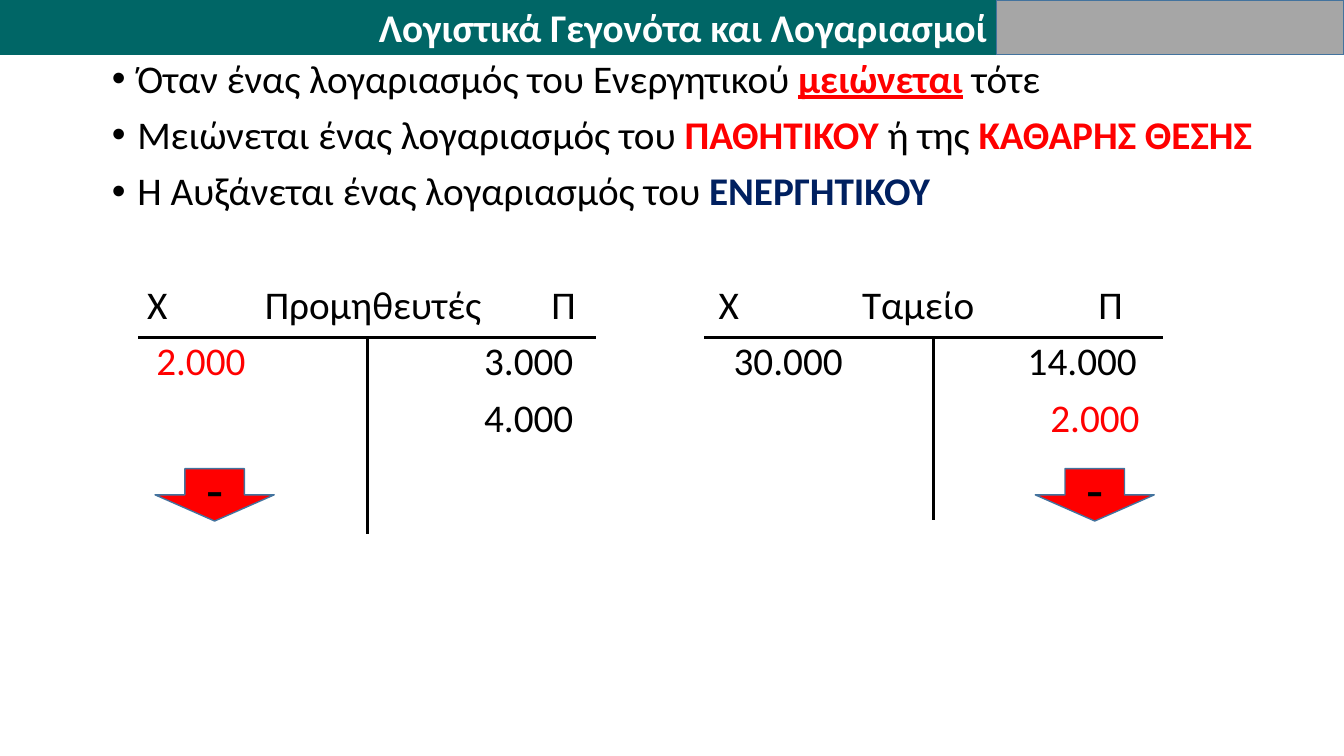
from lxml.etree import SubElement
from pptx import Presentation
from pptx.dml.color import RGBColor
from pptx.enum.shapes import MSO_CONNECTOR as CONN, MSO_SHAPE as SHAPE
from pptx.enum.text import MSO_ANCHOR as ANCHOR, PP_ALIGN as ALIGN
from pptx.oxml.ns import qn
from pptx.util import Cm, Pt

BLACK, RED, NAVY, WHITE = "000000", "FF0000", "002060", "FFFFFF"
TEAL, GRAY, BLUE = "006666", "A6A6A6", "43739E"

BULLETS = [
    [("Όταν ένας λογαριασμός του Ενεργητικού ", BLACK, False, False),
     ("μειώνεται", RED, True, True), (" τότε", BLACK, False, False)],
    [("Μειώνεται ένας λογαριασμός του ", BLACK, False, False),
     ("ΠΑΘΗΤΙΚΟΥ", RED, True, False), (" ή της ", BLACK, False, False),
     ("ΚΑΘΑΡΗΣ ΘΕΣΗΣ", RED, True, False)],
    [("Ή Αυξάνεται ένας λογαριασμός του ", BLACK, False, False),
     ("ΕΝΕΡΓΗΤΙΚΟΥ", NAVY, True, False)],
]
ACCOUNT_ROWS = [
    [("Χ", 0.89, "l", BLACK), ("Προμηθευτές", 6.58, "ctr", BLACK),
     ("Π", 11.38, "ctr", BLACK), ("Χ", 15.29, "l", BLACK),
     ("Ταμείο", 20.32, "ctr", BLACK), ("Π", 25.17, "ctr", BLACK)],
    [("2.000", 1.12, "l", RED), ("3.000", 11.63, "r", BLACK),
     ("30.000", 15.67, "l", BLACK), ("14.000", 25.83, "r", BLACK)],
    [("4.000", 11.63, "r", BLACK), ("2.000", 25.9, "r", RED)],
]


def rgb(color):
    return RGBColor.from_string(color)


def add_run(p, text, color, size=28, bold=False, underline=False):
    r = p.add_run()
    r.text = text
    r.font.name = "Calibri"
    r.font.size = Pt(size)
    r.font.bold = bold
    r.font.underline = underline
    r.font.color.rgb = rgb(color)


def add_bullet(p):
    pPr = p._p.get_or_add_pPr()
    pPr.set("marL", str(Cm(0.64)))
    pPr.set("indent", str(-Cm(0.64)))
    SubElement(pPr, qn("a:buFont"), typeface="Arial")
    SubElement(pPr, qn("a:buChar"), char="•")


def add_tabs(p, cells):
    tabs = SubElement(p._p.get_or_add_pPr(), qn("a:tabLst"))
    for text, pos, align, color in cells:
        SubElement(tabs, qn("a:tab"), pos=str(Cm(pos)), algn=align)


def add_body(s):
    tf = s.shapes.add_textbox(Cm(2.57), Cm(1.37), Cm(30), Cm(17.68)).text_frame
    tf.word_wrap = True
    for i, runs in enumerate(BULLETS):
        p = tf.add_paragraph() if i else tf.paragraphs[0]
        add_bullet(p)
        p.alignment = ALIGN.JUSTIFY
        p.line_spacing = 0.9
        p.space_before = Pt(10 if i else 0)
        for text, color, bold, underline in runs:
            add_run(p, text, color, bold=bold, underline=underline)
    for i, cells in enumerate(ACCOUNT_ROWS):
        p = tf.add_paragraph()
        add_tabs(p, cells)
        p.line_spacing = 0.9
        p.space_before = Pt(10 if i else 51)
        for text, pos, align, color in cells:
            add_run(p, "\t" + text, color)


def add_box(s, kind, x, y, w, h, fill, line):
    sp = s.shapes.add_shape(kind, Cm(x), Cm(y), Cm(w), Cm(h))
    sp.shadow.inherit = False
    sp.fill.solid()
    sp.fill.fore_color.rgb = rgb(fill)
    sp.line.color.rgb = rgb(line)
    sp.line.width = Pt(1)
    return sp


def add_label(sp, text, color, size, align, bold=False):
    tf = sp.text_frame
    tf.vertical_anchor = ANCHOR.MIDDLE
    p = tf.paragraphs[0]
    p.alignment = align
    add_run(p, text, color, size, bold)


def add_line(s, x1, y1, x2, y2):
    line = s.shapes.add_connector(CONN.STRAIGHT, Cm(x1), Cm(y1), Cm(x2), Cm(y2))
    line.line.color.rgb = rgb(BLACK)
    line.line.width = Pt(2.5)
    SubElement(line._element.spPr, qn("a:effectLst"))


def add_t_account(s, x, bottom, arrow_x):
    top, width = 8.51, 11.55
    add_line(s, x, top, x + width, top)
    add_line(s, x + width / 2, top, x + width / 2, bottom)
    arrow = add_box(s, SHAPE.DOWN_ARROW, arrow_x, 11.81, 3, 1.32, RED, BLUE)
    add_label(arrow, "-", BLACK, 40, ALIGN.CENTER)


def main():
    prs = Presentation()
    prs.slide_width, prs.slide_height = Cm(33.87), Cm(19.05)
    s = prs.slides.add_slide(prs.slide_layouts[6])
    add_body(s)
    title = add_box(s, SHAPE.RECTANGLE, 0, 0, 25.12, 1.37, TEAL, TEAL)
    add_label(title, "Λογιστικά Γεγονότα και Λογαριασμοί", WHITE, 28, ALIGN.RIGHT, True)
    add_box(s, SHAPE.RECTANGLE, 25.12, 0, 8.75, 1.37, GRAY, BLUE)
    add_t_account(s, 3.48, 13.46, 3.91)
    add_t_account(s, 17.75, 13.11, 26.09)
    prs.save("out.pptx")


if __name__ == "__main__":
    main()
